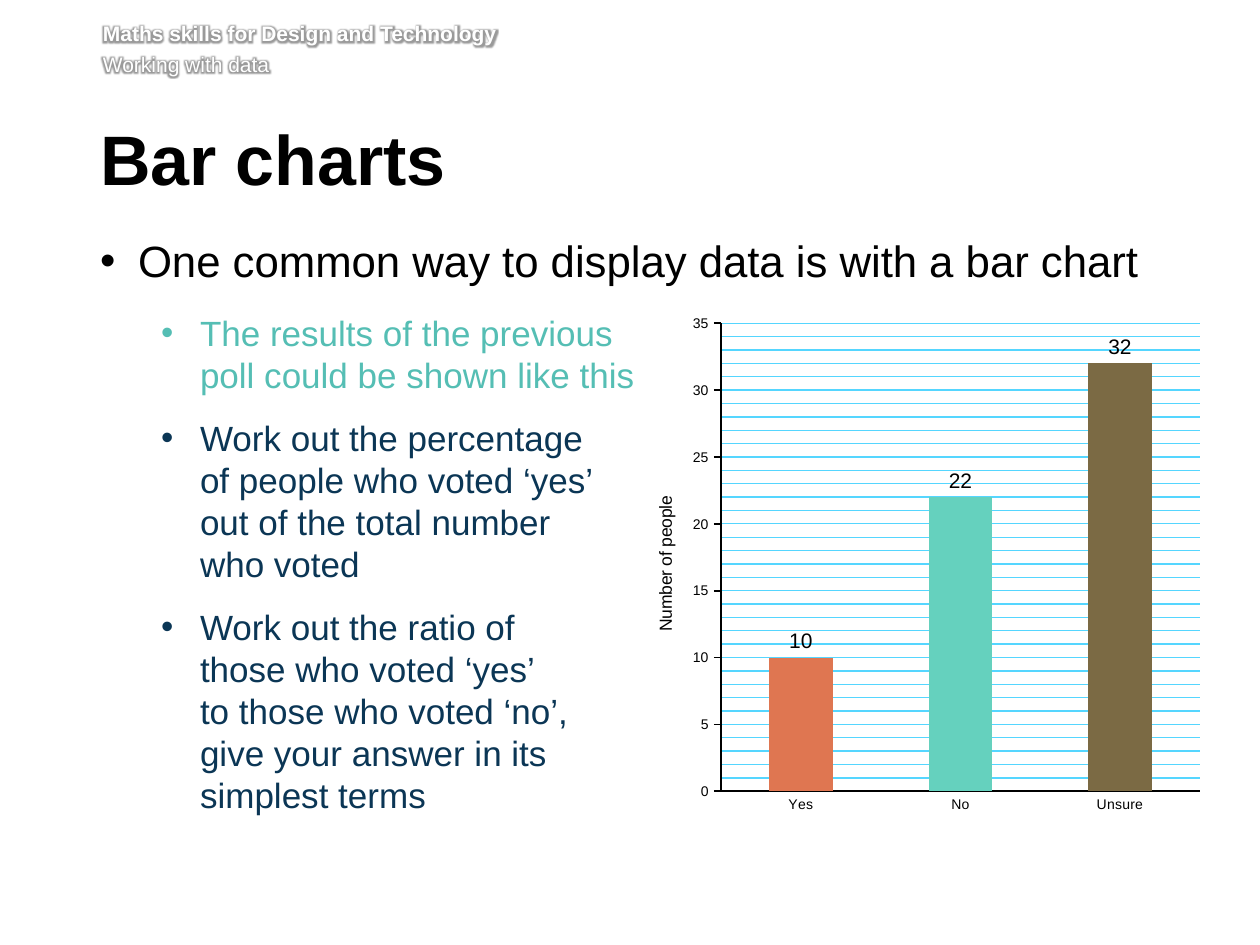
"""Build a slide on bar charts with a list and a column chart."""
from dataclasses import dataclass
from lxml.etree import SubElement
from pptx import Presentation
from pptx.chart.data import CategoryChartData as Data
from pptx.dml.color import RGBColor as Rgb
from pptx.enum.chart import XL_CHART_TYPE as Kind, XL_LABEL_POSITION as Spot
from pptx.enum.chart import XL_TICK_MARK as Tick
from pptx.enum.text import MSO_ANCHOR as Anchor, MSO_AUTO_SIZE as Fit, PP_ALIGN as Align
from pptx.oxml import parse_xml
from pptx.oxml.ns import nsdecls, qn
from pptx.util import Inches, Pt

FACE = "Arial"
HEX = {"ink": "000000", "white": "FFFFFF", "teal": "55BEB4", "navy": "0B3655",
       "grid": "55D6FF", "yes": "DF7651", "no": "65D1BE", "unsure": "7B6A44"}
VOTES = {"Yes": 10, "No": 22, "Unsure": 32}
PLOT = {"x": 0.144, "y": 0.037, "w": 0.828, "h": 0.895}


@dataclass
class Item:
    text: str
    tint: str
    size: int = 20
    level: int = 1
    left: int = 100
    hang: int = 39
    after: int = 12


ITEMS = [
    Item("One common way to display data is with a bar chart", "ink", 25, 0, 38, 38, 14),
    Item("The results of the previous\npoll could be shown like this", "teal"),
    Item("Work out the percentage\nof people who voted ‘yes’\n"
         "out of the total number\nwho voted", "navy"),
    Item("Work out the ratio of\nthose who voted ‘yes’\nto those who voted ‘no’,\n"
         "give your answer in its\nsimplest terms", "navy"),
]


def px(num: int) -> int:
    return round(num * 914400 / 126)


def style(font, size: int, tint: str = "ink", bold: bool = False) -> None:
    font.name, font.size, font.bold = FACE, Pt(size), bold
    font.color.rgb = Rgb.from_string(HEX[tint])


def place(shape, left: int, top: int, width: int, height: int) -> None:
    shape.left, shape.top = px(left), px(top)
    shape.width, shape.height = px(width), px(height)


def frame(shape, top: float, right: float):
    box = shape.text_frame
    box.word_wrap, box.auto_size = True, Fit.NONE
    box.vertical_anchor = Anchor.TOP
    box.margin_left, box.margin_top = 0, Inches(top)
    box.margin_right, box.margin_bottom = Inches(right), Inches(0.05)
    return box


def head(slide) -> None:
    box = frame(slide.shapes.add_textbox(px(103), px(21), px(1111), px(62)), 0, 0)
    lines = [("Maths skills for Design and Technology", True), ("Working with data", False)]
    for row, (text, bold) in enumerate(lines):
        para = box.add_paragraph() if row else box.paragraphs[0]
        para.text = text
        para.space_before = Pt(2.9 if row else 0)
        style(para.font, 12, "white", bold)
        props = para.runs[0].font._element
        props.append(parse_xml(
            f'<a:effectLst {nsdecls("a")}><a:glow rad="63500"><a:srgbClr val="{HEX["ink"]}">'
            '<a:alpha val="40000"/></a:srgbClr></a:glow></a:effectLst>'))


def title(shape) -> None:
    place(shape, 100, 125, 1077, 92)
    para = frame(shape, 0.05, 0.1).paragraphs[0]
    para.text, para.alignment = "Bar charts", Align.LEFT
    para.line_spacing, para.space_after = Pt(39), Pt(15)
    style(para.font, 40, bold=True)


def bullets(shape, items: list[Item]) -> None:
    place(shape, 100, 234, 1075, 476)
    box = frame(shape, 0, 0.1)
    for row, item in enumerate(items):
        para = box.add_paragraph() if row else box.paragraphs[0]
        para.text, para.level = item.text, item.level
        para.space_before, para.space_after = Pt(0), Pt(item.after)
        props = para._p.get_or_add_pPr()
        props.set("marL", str(px(item.left)))
        props.set("indent", str(-px(item.hang)))
        SubElement(props, qn("a:buChar"), char="•")
        style(para.font, item.size, item.tint)


def rule(line, tint: str, width: float) -> None:
    line.color.rgb, line.width = Rgb.from_string(HEX[tint]), Pt(width)


def graph(slide) -> None:
    data = Data()
    data.categories = list(VOTES)
    data.add_series("Series 1", list(VOTES.values()))
    chart = slide.shapes.add_chart(
        Kind.COLUMN_CLUSTERED, px(638), px(304), px(578), px(523), data).chart
    chart.has_legend = chart.has_title = False
    style(chart.font, 10)
    base, side = chart.category_axis, chart.value_axis
    for axis in (base, side):
        style(axis.tick_labels.font, 8)
        rule(axis.format.line, "ink", 1)
        axis.minor_tick_mark = Tick.NONE
    base.major_tick_mark, side.major_tick_mark = Tick.NONE, Tick.OUTSIDE
    side.minimum_scale, side.maximum_scale = 0, 35
    side.major_unit, side.minor_unit = 5, 1
    side.has_major_gridlines = side.has_minor_gridlines = True
    for grid in (side.major_gridlines, ):
        rule(grid.format.line, "grid", 0.75)
    minor = side._element.find(qn("c:minorGridlines"))
    minor.append(parse_xml(
        f'<c:spPr {nsdecls("c", "a")}><a:ln w="{Pt(0.75)}"><a:solidFill>'
        f'<a:srgbClr val="{HEX["grid"]}"/></a:solidFill></a:ln></c:spPr>'))
    para = side.axis_title.text_frame.paragraphs[0]
    para.text = "Number of people"
    style(para.font, 10)
    plot = chart.plots[0]
    plot.gap_width, plot.vary_by_categories = 150, False
    plot.has_data_labels = True
    tags = plot.data_labels
    tags.show_value, tags.position = True, Spot.OUTSIDE_END
    style(tags.font, 12)
    for spot, name in enumerate(VOTES):
        fill = plot.series[0].points[spot].format.fill
        fill.solid()
        fill.fore_color.rgb = Rgb.from_string(HEX[name.lower()])
    area = chart._chartSpace.chart.plotArea
    for old in area.findall(qn("c:layout")):
        area.remove(old)
    modes = "".join(f'<c:{key}Mode val="edge"/>' for key in "xy")
    sizes = "".join(f'<c:{key} val="{val}"/>' for key, val in PLOT.items())
    area.insert(0, parse_xml(
        f'<c:layout {nsdecls("c")}><c:manualLayout><c:layoutTarget val="inner"/>'
        f'{modes}{sizes}</c:manualLayout></c:layout>'))


def main() -> None:
    deck = Presentation()
    deck.slide_width, deck.slide_height = px(1260), px(945)
    slide = deck.slides.add_slide(deck.slide_layouts[1])
    head(slide)
    title(slide.shapes.title)
    bullets(slide.placeholders[1], ITEMS)
    graph(slide)
    deck.save("out.pptx")


if __name__ == "__main__":
    main()
